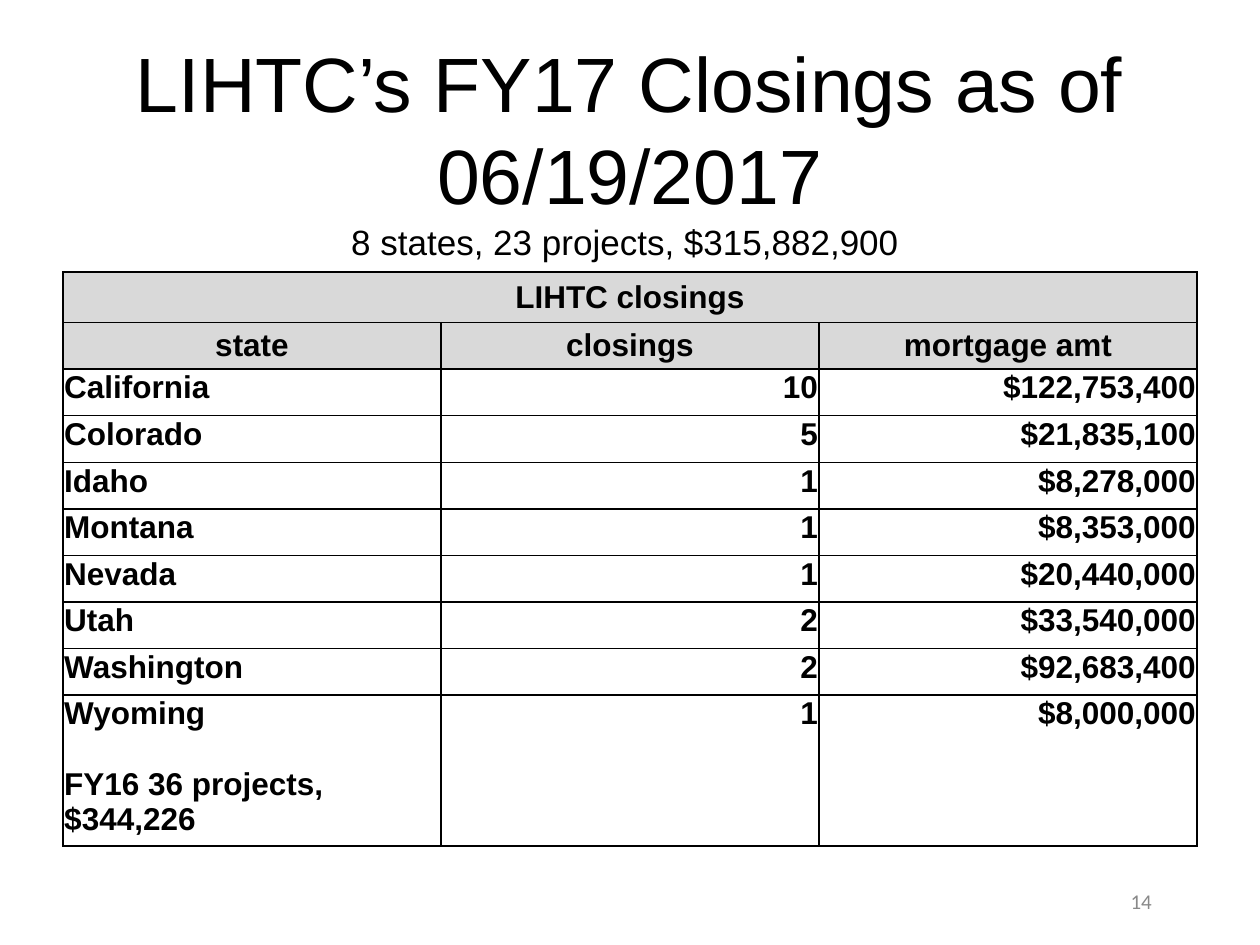
from dataclasses import dataclass

from lxml.etree import SubElement
from pptx import Presentation
from pptx.dml.color import RGBColor
from pptx.enum.text import MSO_ANCHOR, PP_ALIGN
from pptx.oxml.ns import qn
from pptx.util import Inches, Pt

BLACK = RGBColor(0x00, 0x00, 0x00)
WHITE = RGBColor(0xFF, 0xFF, 0xFF)
HEADER_GREY = RGBColor(0xD9, 0xD9, 0xD9)
NUMBER_GREY = RGBColor(0x89, 0x89, 0x89)

MARGIN = 0.5
CONTENT_WIDTH = 9
TABLE_TOP = 2.16
BANNER_HEIGHT, ROW_HEIGHT, LAST_HEIGHT = 0.4, 0.37, 0.84
CELL_INSET = Inches(0.01)


@dataclass(frozen=True)
class Closing:
    state: str
    count: int
    mortgage: int


@dataclass(frozen=True)
class TextStyle:
    size: float
    color: RGBColor = BLACK
    font: str = "Arial"
    bold: bool = False


HEADINGS = ("state", "closings", "mortgage amt")
PRIOR_YEAR = "FY16 36 projects, $344,226"
CLOSINGS = (
    Closing("California", 10, 122_753_400),
    Closing("Colorado", 5, 21_835_100),
    Closing("Idaho", 1, 8_278_000),
    Closing("Montana", 1, 8_353_000),
    Closing("Nevada", 1, 20_440_000),
    Closing("Utah", 2, 33_540_000),
    Closing("Washington", 2, 92_683_400),
    Closing("Wyoming", 1, 8_000_000),
)
TITLE_STYLE = TextStyle(44)
SUMMARY_STYLE = TextStyle(20)
CELL_STYLE = TextStyle(18, bold=True)
NUMBER_STYLE = TextStyle(12, NUMBER_GREY, "Calibri")


def add_run(paragraph, text: str, style: TextStyle) -> None:
    run = paragraph.add_run()
    run.text = text
    run.font.size = Pt(style.size)
    run.font.name = style.font
    run.font.bold = style.bold
    run.font.color.rgb = style.color


def add_text_frame(slide, left: float, top: float, width: float, height: float):
    frame = slide.shapes.add_textbox(
        Inches(left), Inches(top), Inches(width), Inches(height)
    ).text_frame
    frame.word_wrap = True
    frame.vertical_anchor = MSO_ANCHOR.MIDDLE
    return frame


def add_title(slide) -> None:
    frame = add_text_frame(slide, MARGIN, 0.91, CONTENT_WIDTH, 1.25)
    frame.margin_bottom = Inches(0.76)
    title = frame.paragraphs[0]
    title.alignment = PP_ALIGN.CENTER
    add_run(title, "LIHTC’s FY17 Closings as of 06/19/2017", TITLE_STYLE)
    title.add_line_break()
    add_run(title, "8 states, 23 projects, $315,882,900 ", SUMMARY_STYLE)


def add_page_number(slide) -> None:
    number = add_text_frame(slide, 7.17, 6.95, 2.07, 0.4).paragraphs[0]
    number.alignment = PP_ALIGN.RIGHT
    add_run(number, "14", NUMBER_STYLE)


def format_cell(cell, fill: RGBColor) -> None:
    cell.margin_left = cell.margin_right = CELL_INSET
    cell.margin_top = cell.margin_bottom = CELL_INSET
    properties = cell._tc.get_or_add_tcPr()
    for side in ("a:lnL", "a:lnR", "a:lnT", "a:lnB"):
        border = SubElement(properties, qn(side), w=str(Pt(1)))
        border_fill = SubElement(border, qn("a:solidFill"))
        SubElement(border_fill, qn("a:srgbClr"), val=str(BLACK))
    cell.fill.solid()
    cell.fill.fore_color.rgb = fill


def write_cell(cell, text: str, align: PP_ALIGN, anchor: MSO_ANCHOR) -> None:
    cell.vertical_anchor = anchor
    paragraph = cell.text_frame.paragraphs[0]
    paragraph.alignment = align
    add_run(paragraph, text, CELL_STYLE)


def add_closings_table(slide) -> None:
    heights = [BANNER_HEIGHT] + [ROW_HEIGHT] * len(CLOSINGS) + [LAST_HEIGHT]
    table = slide.shapes.add_table(
        len(heights), len(HEADINGS), Inches(MARGIN), Inches(TABLE_TOP),
        Inches(CONTENT_WIDTH), Inches(sum(heights)),
    ).table
    for row_index, height in enumerate(heights):
        table.rows[row_index].height = Inches(height)
        for column in range(len(HEADINGS)):
            fill = HEADER_GREY if row_index < 2 else WHITE
            format_cell(table.cell(row_index, column), fill)

    banner = table.cell(0, 0)
    banner.merge(table.cell(0, len(HEADINGS) - 1))
    write_cell(banner, "LIHTC closings", PP_ALIGN.CENTER, MSO_ANCHOR.MIDDLE)
    for column, heading in enumerate(HEADINGS):
        write_cell(table.cell(1, column), heading, PP_ALIGN.CENTER, MSO_ANCHOR.MIDDLE)

    for row_index, closing in enumerate(CLOSINGS, start=2):
        values = (closing.state, str(closing.count), f"${closing.mortgage:,}")
        for column, value in enumerate(values):
            align = PP_ALIGN.RIGHT if column else PP_ALIGN.LEFT
            write_cell(table.cell(row_index, column), value, align, MSO_ANCHOR.TOP)

    prior_year = table.cell(len(heights) - 1, 0).text_frame.add_paragraph()
    prior_year.space_before = Pt(20)
    add_run(prior_year, PRIOR_YEAR, CELL_STYLE)


def main() -> None:
    presentation = Presentation()
    presentation.slide_width = Inches(10)
    presentation.slide_height = Inches(7.5)
    slide = presentation.slides.add_slide(presentation.slide_layouts[6])
    add_title(slide)
    add_page_number(slide)
    add_closings_table(slide)
    presentation.save("out.pptx")


if __name__ == "__main__":
    main()
